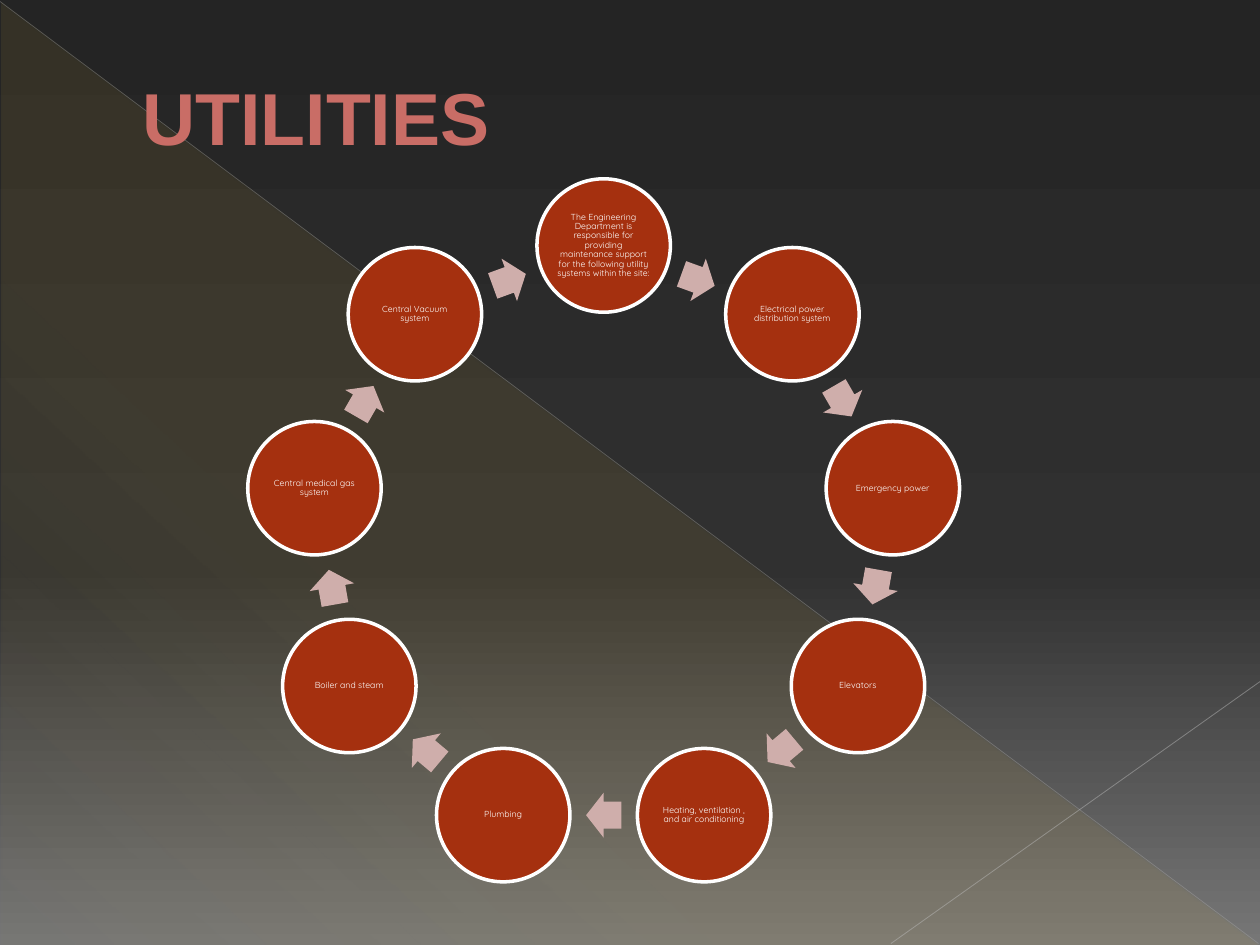
from math import cos, radians, sin

from pptx import Presentation
from pptx.dml.color import RGBColor
from pptx.enum.shapes import MSO_CONNECTOR, MSO_SHAPE
from pptx.enum.text import MSO_ANCHOR, PP_ALIGN
from pptx.oxml.ns import qn
from pptx.oxml.xmlchemy import OxmlElement
from pptx.util import Cm, Pt

TITLE = "UTILITIES"
STEPS = [
    "The Engineering Department is responsible for providing maintenance "
    "support for the following utility systems within the site:",
    "Electrical power distribution system",
    "Emergency power",
    "Elevators",
    "Heating, ventilation , and air conditioning",
    "Plumbing",
    "Boiler and steam",
    "Central medical gas system",
    "Central Vacuum system",
]
THEME = {
    "title": "C96D66", "title_edge": "72210A", "disc": "A5300F",
    "white": "FFFFFF", "arrow": "CFAEAB",
    "title_font": "Arial", "step_font": "Quicksand",
    "title_size": 42, "step_size": 5,
    # Gradient stops: position %, colour, opacity %
    "backdrop": [(0, "242424", 100), (60, "303030", 100), (100, "767676", 100)],
    "wedge": [(0, "E5C243", 10), (70, "E5C243", 8), (100, "E5C243", 1)],
}
# Start, end (cm), colour, width (pt), opacity %
RULES = [
    ((0, 0.03), (25.37, 19.02), "B6B6B6", 0.39, 35),
    ((25.4, 13.74), (17.96, 19.02), "BFBFBF", 0.47, 45),
]
CENTRE_X, CENTRE_Y, RADIUS = 12.17, 10.87, 5.92
DISC = 2.69
ARROW_WIDTH, ARROW_HEIGHT = 0.71, 0.91


def rgb(name):
    return RGBColor.from_string(THEME[name])


def add_child(parent, tag, **attributes):
    child = OxmlElement(tag)
    for key, value in attributes.items():
        child.set(key, str(value))
    parent.append(child)
    return child


def set_gradient(fill, owner, stops, angle):
    """Give fill, held in the owner element, any number of translucent stops."""
    fill.gradient()
    gradient = owner.find(".//" + qn("a:gradFill"))
    gradient.clear()
    stop_list = add_child(gradient, "a:gsLst")
    for position, colour, opacity in stops:
        stop = add_child(stop_list, "a:gs", pos=position * 1000)
        paint = add_child(stop, "a:srgbClr", val=colour)
        add_child(paint, "a:alpha", val=opacity * 1000)
    add_child(gradient, "a:lin", ang=angle * 60000, scaled=0)


def add_plain_shape(page, kind, left, top, width, height):
    shape = page.shapes.add_shape(kind, Cm(left), Cm(top), Cm(width), Cm(height))
    shape.shadow.inherit = False
    shape.line.fill.background()
    return shape


def add_rule(page, start, end, colour, width, opacity):
    rule = page.shapes.add_connector(
        MSO_CONNECTOR.STRAIGHT, *(Cm(value) for value in start + end))
    rule.line.width = Pt(width)
    rule.line.color.rgb = RGBColor.from_string(colour)
    properties = rule._element.spPr
    paint = properties.find(".//" + qn("a:srgbClr"))
    add_child(paint, "a:alpha", val=opacity * 1000)
    add_child(properties, "a:effectLst")


def add_backdrop(page):
    set_gradient(page.background.fill, page.element, THEME["backdrop"], 90)
    wedge = add_plain_shape(page, MSO_SHAPE.RIGHT_TRIANGLE, 0.03, 0.05, 25.35, 19)
    set_gradient(wedge.fill, wedge._element, THEME["wedge"], 133)
    for rule in RULES:
        add_rule(page, *rule)


def format_title(page):
    title = page.shapes.title
    page.shapes._spTree.append(title._element)  # in front of the backdrop
    title.left, title.top = Cm(1.27), Cm(0.43)
    title.width, title.height = Cm(22.43), Cm(3.81)
    title.text_frame.text = TITLE
    title.text_frame.vertical_anchor = MSO_ANCHOR.MIDDLE
    para = title.text_frame.paragraphs[0]
    para.alignment = PP_ALIGN.LEFT
    para._p.get_or_add_pPr().set("marL", str(Cm(1.35)))
    span = para.runs[0]
    span.font.name, span.font.size = THEME["title_font"], Pt(THEME["title_size"])
    span.font.bold = True
    span.font.color.rgb = rgb("title")
    edge = OxmlElement("a:ln")
    edge.set("w", str(Pt(0.5)))
    paint = add_child(edge, "a:solidFill")
    add_child(paint, "a:srgbClr", val=THEME["title_edge"])
    span._r.get_or_add_rPr().insert(0, edge)


def place_on_ring(page, kind, angle, radius, width, height):
    """Centre a shape on a ring, at degrees clockwise from the top."""
    x = CENTRE_X + radius * sin(radians(angle))
    y = CENTRE_Y - radius * cos(radians(angle))
    return add_plain_shape(page, kind, x - width / 2, y - height / 2, width, height)


def add_step(page, text, angle):
    disc = place_on_ring(page, MSO_SHAPE.OVAL, angle, RADIUS, DISC, DISC)
    disc.fill.solid()
    disc.fill.fore_color.rgb = rgb("disc")
    disc.line.color.rgb = rgb("white")
    disc.line.width = Pt(2)
    frame = disc.text_frame
    frame.word_wrap = True
    frame.vertical_anchor = MSO_ANCHOR.MIDDLE
    frame.margin_left = frame.margin_right = Cm(0.02)
    frame.margin_top = frame.margin_bottom = Cm(0.02)
    frame.text = text
    para = frame.paragraphs[0]
    para.alignment = PP_ALIGN.CENTER
    para.line_spacing = 0.9
    para.font.name, para.font.size = THEME["step_font"], Pt(THEME["step_size"])
    para.font.color.rgb = rgb("white")


def add_arrow(page, angle, half_step):
    """Put an arrow midway along the chord between two neighbouring discs."""
    arrow = place_on_ring(page, MSO_SHAPE.RIGHT_ARROW, angle,
                          RADIUS * cos(radians(half_step)),
                          ARROW_WIDTH, ARROW_HEIGHT)
    arrow.adjustments[0], arrow.adjustments[1] = 0.6, 0.5
    arrow.rotation = angle
    arrow.fill.solid()
    arrow.fill.fore_color.rgb = rgb("arrow")


def main():
    deck = Presentation()
    deck.slide_width, deck.slide_height = Cm(25.4), Cm(19.05)
    page = deck.slides.add_slide(deck.slide_layouts.get_by_name("Title Only"))
    add_backdrop(page)
    format_title(page)
    step = 360 / len(STEPS)
    for index, text in enumerate(STEPS):
        add_step(page, text, index * step)
        add_arrow(page, (index + 0.5) * step, step / 2)
    deck.save("out.pptx")


if __name__ == "__main__":
    main()
